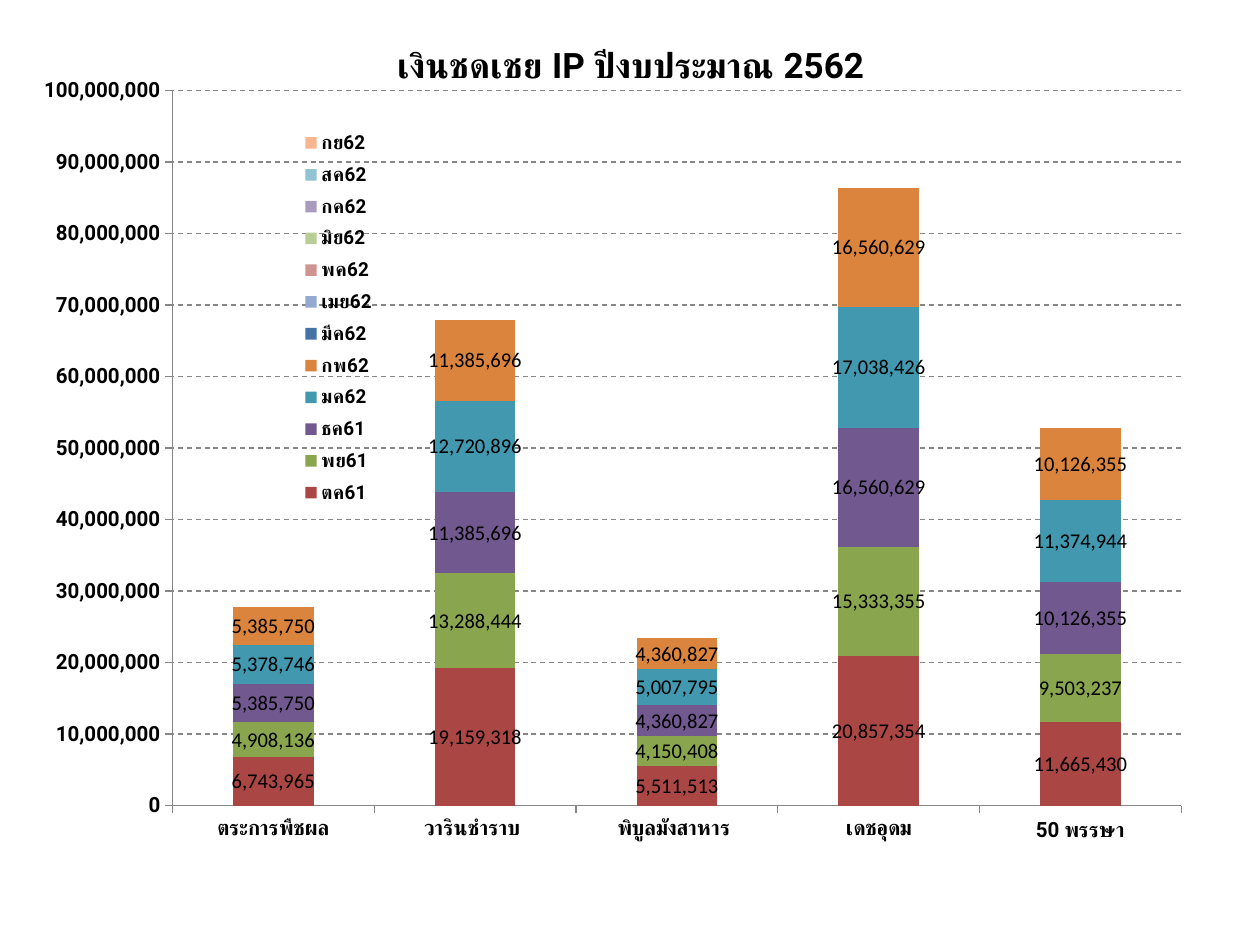
import pptx
import pptx.chart.data
import pptx.dml.color
import pptx.enum.chart
import pptx.enum.dml
import pptx.enum.text
import pptx.oxml
import pptx.oxml.ns
import pptx.util

RGB = pptx.dml.color.RGBColor
BLACK = RGB(0x00, 0x00, 0x00)
GREY = RGB(0x86, 0x86, 0x86)
RED = RGB(0xAA, 0x46, 0x43)
GREEN = RGB(0x89, 0xA5, 0x4E)
PURPLE = RGB(0x71, 0x58, 0x8F)
TEAL = RGB(0x41, 0x98, 0xAF)
ORANGE = RGB(0xDB, 0x84, 0x3D)
BLUE = RGB(0x45, 0x72, 0xA7)
PALE_BLUE = RGB(0x93, 0xA9, 0xCF)
PALE_RED = RGB(0xD1, 0x93, 0x92)
PALE_GREEN = RGB(0xB9, 0xCD, 0x96)
PALE_PURPLE = RGB(0xA9, 0x9B, 0xBD)
PALE_TEAL = RGB(0x91, 0xC3, 0xD5)
PALE_ORANGE = RGB(0xF9, 0xB5, 0x90)

HOSPITALS = ["ตระการพืชผล", "วารินชำราบ ", "พิบูลมังสาหาร ", "เดชอุดม", "50 พรรษา"]
NO_DATA = [None] * len(HOSPITALS)
MONTHS = [
    ("ตค61", RED, [6743965, 19159318, 5511513, 20857354, 11665430]),
    ("พย61", GREEN, [4908136, 13288444, 4150408, 15333355, 9503237]),
    ("ธค61", PURPLE, [5385750, 11385696, 4360827, 16560629, 10126355]),
    ("มค62", TEAL, [5378746, 12720896, 5007795, 17038426, 11374944]),
    ("กพ62", ORANGE, [5385750, 11385696, 4360827, 16560629, 10126355]),
    ("มีค62", BLUE, NO_DATA),
    ("เมย62", PALE_BLUE, NO_DATA),
    ("พค62", PALE_RED, NO_DATA),
    ("มิย62", PALE_GREEN, NO_DATA),
    ("กค62", PALE_PURPLE, NO_DATA),
    ("สค62", PALE_TEAL, NO_DATA),
    ("กย62", PALE_ORANGE, NO_DATA),
]
LABEL_FORMAT = r'_-* #,##0_-;\-* #,##0_-;_-* "-"??_-;_-@_'


def style_font(font, name, size, bold):
    font.name = name
    font.size = pptx.util.Pt(size)
    font.bold = bold
    font.color.rgb = BLACK


def make_layout(left, top, width, height, target=""):
    """Return a manual chart layout, given in shares of the chart's size."""
    inner = f'<c:layoutTarget val="{target}"/>' if target else ""
    return pptx.oxml.parse_xml(
        f'<c:layout {pptx.oxml.ns.nsdecls("c")}><c:manualLayout>{inner}'
        '<c:xMode val="edge"/><c:yMode val="edge"/>'
        f'<c:x val="{left}"/><c:y val="{top}"/><c:w val="{width}"/><c:h val="{height}"/>'
        '</c:manualLayout></c:layout>')


deck = pptx.Presentation()
deck.slide_width = pptx.util.Inches(10)
deck.slide_height = pptx.util.Inches(7.5)
page_width, page_height = deck.slide_width, deck.slide_height
page = deck.slides.add_slide(deck.slide_layouts[5])

# Stacked columns, one series per month
data = pptx.chart.data.CategoryChartData(number_format="#,##0")
data.categories = HOSPITALS
for month, color, amounts in MONTHS:
    data.add_series(month, amounts)
chart = page.shapes.add_chart(
    pptx.enum.chart.XL_CHART_TYPE.COLUMN_STACKED,
    int(page_width * 0.035), int(page_height * 0.07),
    int(page_width * 0.93), int(page_height * 0.86), data).chart
chart.has_title = False
style_font(chart.font, "Calibri", 18, False)

plot = chart.plots[0]
plot.gap_width = 150
plot.overlap = 100
plot.vary_by_categories = False
for series, (month, color, amounts) in zip(plot.series, MONTHS):
    series.format.fill.solid()
    series.format.fill.fore_color.rgb = color
    if amounts is not NO_DATA:
        labels = series.data_labels
        labels.show_value = True
        labels.number_format = LABEL_FORMAT
        labels.number_format_is_linked = False
        style_font(labels.font, "Calibri", 12, False)

# Axes and gridlines
amount_axis = chart.value_axis
amount_axis.minimum_scale = 0
amount_axis.maximum_scale = 100_000_000
amount_axis.major_unit = 10_000_000
amount_axis.tick_labels.number_format = "#,##0"
amount_axis.tick_labels.number_format_is_linked = False
amount_axis.has_major_gridlines = True
gridline = amount_axis.major_gridlines.format.line
gridline.color.rgb = GREY
gridline.width = pptx.util.Pt(0.75)
gridline.dash_style = pptx.enum.dml.MSO_LINE.DASH
for axis in (chart.category_axis, amount_axis):
    axis.major_tick_mark = pptx.enum.chart.XL_TICK_MARK.OUTSIDE
    axis.format.line.color.rgb = GREY
    axis.format.line.width = pptx.util.Pt(0.75)
    style_font(axis.tick_labels.font, "Roboto", 12, True)

# Legend over the plot area
chart.has_legend = True
legend = chart.legend
legend.position = pptx.enum.chart.XL_LEGEND_POSITION.LEFT
legend.include_in_layout = False
style_font(legend.font, "Roboto", 11, True)

plot_area = chart.element.find(".//" + pptx.oxml.ns.qn("c:plotArea"))
legend_element = chart.element.find(".//" + pptx.oxml.ns.qn("c:legend"))
for parent in (plot_area, legend_element):
    for old_layout in parent.findall(pptx.oxml.ns.qn("c:layout")):
        parent.remove(old_layout)
plot_area.insert(0, make_layout(0.09, 0.03, 0.88, 0.88, "inner"))
legend_element.find(pptx.oxml.ns.qn("c:legendPos")).addnext(
    make_layout(0.19, 0.07, 0.09, 0.48))

# Title
title = page.shapes.title
title.left, title.top = int(page_width * 0.083), int(page_height * 0.039)
title.width, title.height = int(page_width * 0.835), int(page_height * 0.058)
frame = title.text_frame
frame.text = "เงินชดเชย IP ปีงบประมาณ 2562"
frame.word_wrap = True
frame.auto_size = pptx.enum.text.MSO_AUTO_SIZE.SHAPE_TO_FIT_TEXT
frame.vertical_anchor = pptx.enum.text.MSO_ANCHOR.TOP
paragraph = frame.paragraphs[0]
paragraph.alignment = pptx.enum.text.PP_ALIGN.CENTER
style_font(paragraph.font, "Roboto", 20, True)
# The title reads in front of the chart
page.shapes.element.append(title.element)

deck.save("out.pptx")
